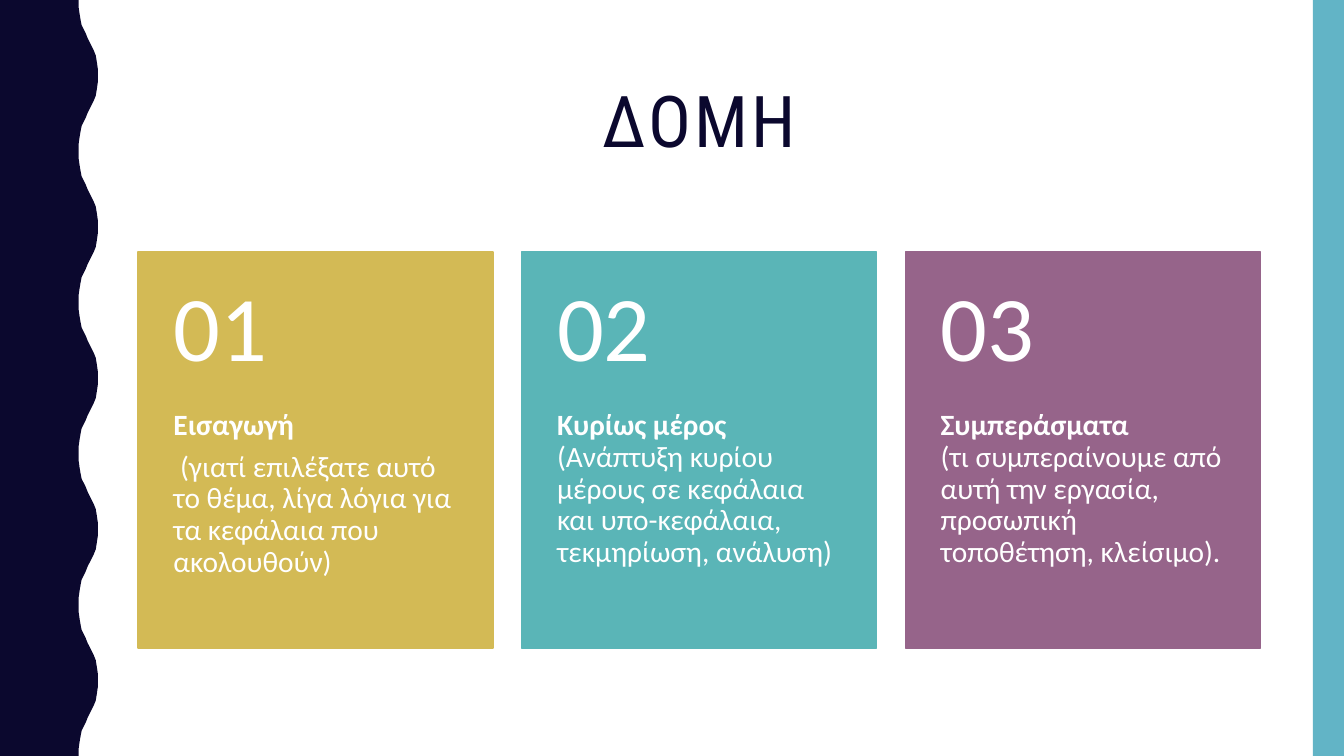
from pptx import Presentation
from pptx.dml.color import RGBColor
from pptx.enum.shapes import MSO_SHAPE as Shape
from pptx.enum.text import MSO_ANCHOR as Anchor, PP_ALIGN as Align
from pptx.util import Inches, Pt

COLORS = {
    "navy": "0B082E",
    "sky": "62B4C6",
    "gold": "D3BA55",
    "teal": "5AB5B7",
    "plum": "96648A",
    "white": "FFFFFF",
}
FORMATS = {
    "title": {"name": "Roboto Condensed", "size": Pt(51)},
    "number": {"name": "Calibri", "size": Pt(66)},
    "heading": {"name": "Calibri", "size": Pt(21), "bold": True},
    "body": {"name": "Calibri", "size": Pt(21), "bold": False},
}
# Each card: colour, then paragraphs made of (style, text) spans.
CARDS = [
    ("gold", [
        [("heading", "Εισαγωγή")],
        [("body", " (γιατί επιλέξατε αυτό το θέμα, λίγα λόγια για τα κεφάλαια που ακολουθούν)")],
    ]),
    ("teal", [
        [("heading", "Κυρίως μέρος "),
         ("body", "(Ανάπτυξη κυρίου μέρους σε κεφάλαια και υπο-κεφάλαια, τεκμηρίωση, ανάλυση)")],
    ]),
    ("plum", [
        [("heading", "Συμπεράσματα \n"),
         ("body", "(τι συμπεραίνουμε από αυτή την εργασία, προσωπική τοποθέτηση, κλείσιμο).")],
    ]),
]
CARD_LEFT, CARD_TOP, CARD_WIDTH, CARD_HEIGHT = 1.37, 2.5, 3.52, 3.93
CARD_STEP, NUMBER_HEIGHT = 3.805, 1.57
PAGE_HEIGHT, WAVE_LENGTH, WAVE_COUNT = 7.5, 1.5, 5
# Outline from a trough of the wave to its crest; the way back mirrors it.
HALF_WAVE = [
    (0.78, 0), (0.78, 0.07), (0.79, 0.14), (0.8, 0.2), (0.81, 0.25),
    (0.83, 0.29), (0.85, 0.33), (0.87, 0.38), (0.89, 0.42), (0.91, 0.46),
    (0.93, 0.5), (0.95, 0.55), (0.96, 0.61), (0.97, 0.68), (0.97, 0.75),
]


def rgb(color):
    return RGBColor.from_string(COLORS[color])


def paint(shape, color, outlined=False):
    shape.shadow.inherit = False
    shape.fill.solid()
    shape.fill.fore_color.rgb = rgb(color)
    if outlined:
        shape.line.color.rgb = rgb(color)
        shape.line.width = Pt(1)
    else:
        shape.line.fill.background()


def add_rect(page, area, color, outlined=False):
    rect = page.shapes.add_shape(Shape.RECTANGLE, *map(Inches, area))
    paint(rect, color, outlined)


def add_wavy_band(page):
    wave = HALF_WAVE + [(x, WAVE_LENGTH - y) for x, y in HALF_WAVE[-2::-1]]
    edge = [(x, y + index * WAVE_LENGTH) for index in range(WAVE_COUNT) for x, y in wave]
    points = [(Inches(x), Inches(y)) for x, y in edge + [(0, PAGE_HEIGHT)]]
    outline = page.shapes.build_freeform(0, 0)
    outline.add_line_segments(points, close=True)
    paint(outline.convert_to_shape(), "navy")


def add_span(para, style, text, color, spacing):
    """Add a run, turning a closing newline into a line break."""
    span = para.add_run()
    span.text = text.rstrip("\n")
    for key, value in FORMATS[style].items():
        setattr(span.font, key, value)
    span.font.color.rgb = rgb(color)
    if spacing:
        span._r.get_or_add_rPr().set("spc", str(spacing * 100))
    if text.endswith("\n"):
        para.add_line_break()


def add_text(page, area, paragraphs, margins, anchor=Anchor.TOP,
             align=Align.LEFT, color="white", spacing=0):
    frame = page.shapes.add_textbox(*map(Inches, area)).text_frame
    frame.word_wrap = True
    frame.vertical_anchor = anchor
    for side, margin in zip(("left", "top", "right", "bottom"), margins):
        setattr(frame, f"margin_{side}", Inches(margin))
    for index, spans in enumerate(paragraphs):
        para = frame.add_paragraph() if index else frame.paragraphs[0]
        layout = {"alignment": align, "line_spacing": 0.9, "space_after": Pt(7)}
        for key, value in layout.items():
            setattr(para, key, value)
        for style, text in spans:
            add_span(para, style, text, color, spacing)


def add_card(page, index, color, paragraphs):
    left = CARD_LEFT + index * CARD_STEP
    add_rect(page, (left, CARD_TOP, CARD_WIDTH, CARD_HEIGHT), color, outlined=True)
    add_text(page, (left, CARD_TOP + NUMBER_HEIGHT, CARD_WIDTH, CARD_HEIGHT - NUMBER_HEIGHT),
             paragraphs, (0.35, 0, 0.35, 0.36))
    add_text(page, (left, CARD_TOP, CARD_WIDTH, NUMBER_HEIGHT),
             [[("number", f"{index + 1:02}")]], (0.35, 0.18, 0.35, 0.18), Anchor.MIDDLE)


def main():
    deck = Presentation()
    deck.slide_width, deck.slide_height = Inches(13.33), Inches(PAGE_HEIGHT)
    page = deck.slides.add_slide(deck.slide_layouts[6])
    add_wavy_band(page)
    add_rect(page, (13.02, 0, 0.31, PAGE_HEIGHT), "sky")
    add_text(page, (1.37, 0.42, 11.13, 1.63), [[("title", "ΔΟΜΗ")]],
             (0.1, 0.05, 0.1, 0.05), Anchor.MIDDLE, Align.CENTER, "navy", spacing=2)
    for index, (color, paragraphs) in enumerate(CARDS):
        add_card(page, index, color, paragraphs)
    deck.save("out.pptx")


if __name__ == "__main__":
    main()
